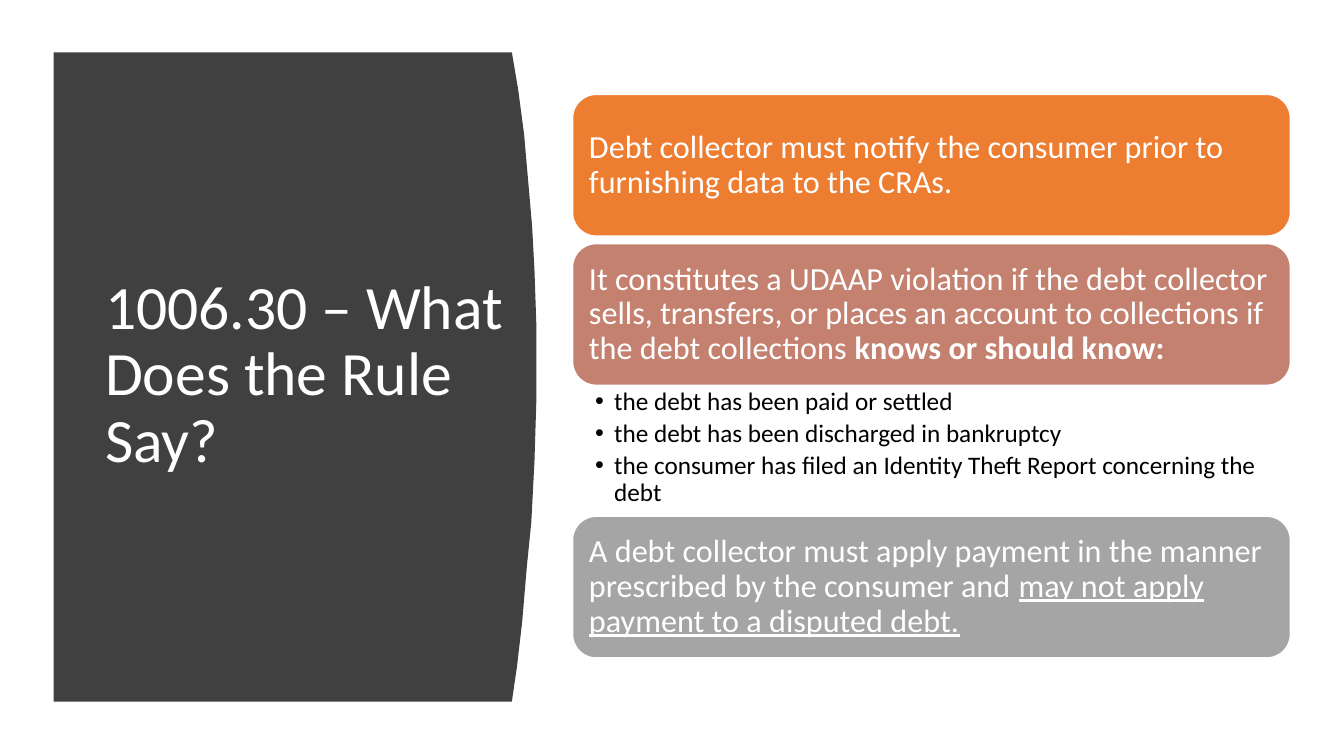
from lxml.etree import SubElement
from pptx import Presentation
from pptx.dml.color import RGBColor
from pptx.enum.shapes import MSO_SHAPE
from pptx.enum.text import MSO_ANCHOR, PP_ALIGN
from pptx.oxml.ns import qn
from pptx.util import Cm, Pt

TITLE = "1006.30 – What Does the Rule Say?"
RULES = [
    {"top": 2.38, "fill": "ED7D31", "spans": [
        ("Debt collector must notify the consumer prior to furnishing data to the CRAs.", {})]},
    {"top": 6.14, "fill": "C48170", "spans": [
        ("It constitutes a UDAAP violation if the debt collector sells, transfers, or places "
         "an account to collections if the debt collections ", {}),
        ("knows or should know:", {"bold": True})]},
    {"top": 13.01, "fill": "A5A5A5", "spans": [
        ("A debt collector must apply payment in the manner prescribed by the consumer and ", {}),
        ("may not apply payment to a disputed debt.", {"underline": True})]},
]
CONDITIONS = [
    "the debt has been paid or settled",
    "the debt has been discharged in bankruptcy",
    "the consumer has filed an Identity Theft Report concerning the debt",
]
PANEL_LEFT = 1.35
PANEL_EDGE = [
    (12.9, 1.32), (13.06, 2.26), (13.21, 3.4), (13.31, 4.55), (13.41, 5.69),
    (13.47, 6.81), (13.52, 8.26), (13.52, 10), (13.47, 11.63), (13.39, 13.16),
    (13.28, 14.25), (13.16, 15.67), (13.03, 16.79), (12.9, 17.68),
]
RULE_LEFT, RULE_WIDTH, RULE_HEIGHT = 14.43, 18.09, 3.57
WHITE, BLACK, CHARCOAL = "FFFFFF", "000000", "404040"


def color(value):
    return RGBColor.from_string(value)


def paint(shape, fill):
    shape.shadow.inherit = False
    shape.fill.solid()
    shape.fill.fore_color.rgb = color(fill)


def set_frame(frame, anchor, left, top, right, bottom):
    frame.word_wrap = True
    frame.vertical_anchor = anchor
    frame.margin_left, frame.margin_top = Cm(left), Cm(top)
    frame.margin_right, frame.margin_bottom = Cm(right), Cm(bottom)


def add_text(para, text, size, fill=WHITE, bold=False, underline=False):
    para.alignment = PP_ALIGN.LEFT
    para.line_spacing = 0.9
    span = para.add_run()
    span.text = text
    span.font.name = "Calibri"
    span.font.size = Pt(size)
    span.font.color.rgb = color(fill)
    span.font.bold = bold
    span.font.underline = underline


def add_bullet(para, indent):
    properties = para._p.get_or_add_pPr()
    properties.set("marL", str(Cm(indent)))
    properties.set("indent", str(-Cm(indent)))
    SubElement(properties, qn("a:buFont")).set("typeface", "Arial")
    SubElement(properties, qn("a:buChar")).set("char", "•")


def add_panel(page):
    top, bottom = PANEL_EDGE[0][1], PANEL_EDGE[-1][1]
    builder = page.shapes.build_freeform(Cm(PANEL_LEFT), Cm(top))
    corners = PANEL_EDGE + [(PANEL_LEFT, bottom)]
    builder.add_line_segments([(Cm(x), Cm(y)) for x, y in corners], close=True)
    panel = builder.convert_to_shape()
    paint(panel, CHARCOAL)
    panel.line.fill.background()


def add_title(page):
    box = page.shapes.add_textbox(Cm(2.4), Cm(2.82), Cm(10.69), Cm(13.31))
    set_frame(box.text_frame, MSO_ANCHOR.MIDDLE, 0.25, 0.13, 0.25, 0.13)
    add_text(box.text_frame.paragraphs[0], TITLE, 44)


def add_rule(page, rule):
    box = page.shapes.add_shape(MSO_SHAPE.ROUNDED_RECTANGLE, Cm(RULE_LEFT), Cm(rule["top"]),
                                Cm(RULE_WIDTH), Cm(RULE_HEIGHT))
    paint(box, rule["fill"])
    box.line.color.rgb = color(WHITE)
    box.line.width = Pt(1)
    set_frame(box.text_frame, MSO_ANCHOR.MIDDLE, 0.24, 0.24, 0.24, 0.24)
    for text, style in rule["spans"]:
        add_text(box.text_frame.paragraphs[0], text, 23, **style)


def add_conditions(page):
    top = RULES[1]["top"] + RULE_HEIGHT
    box = page.shapes.add_textbox(Cm(RULE_LEFT), Cm(top), Cm(RULE_WIDTH),
                                  Cm(RULES[2]["top"] - top))
    frame = box.text_frame
    set_frame(frame, MSO_ANCHOR.TOP, 0.57, 0.08, 0.46, 0.08)
    for index, condition in enumerate(CONDITIONS):
        para = frame.add_paragraph() if index else frame.paragraphs[0]
        add_text(para, condition, 18, fill=BLACK)
        para.space_after = Pt(3.5)
        add_bullet(para, 0.48)


def main():
    """Build the slide with a curved title panel and the rule boxes."""
    deck = Presentation()
    deck.slide_width, deck.slide_height = Cm(33.87), Cm(19.05)
    page = deck.slides.add_slide(deck.slide_layouts[6])
    add_panel(page)
    add_title(page)
    for rule in RULES:
        add_rule(page, rule)
    add_conditions(page)
    deck.save("out.pptx")


if __name__ == "__main__":
    main()
